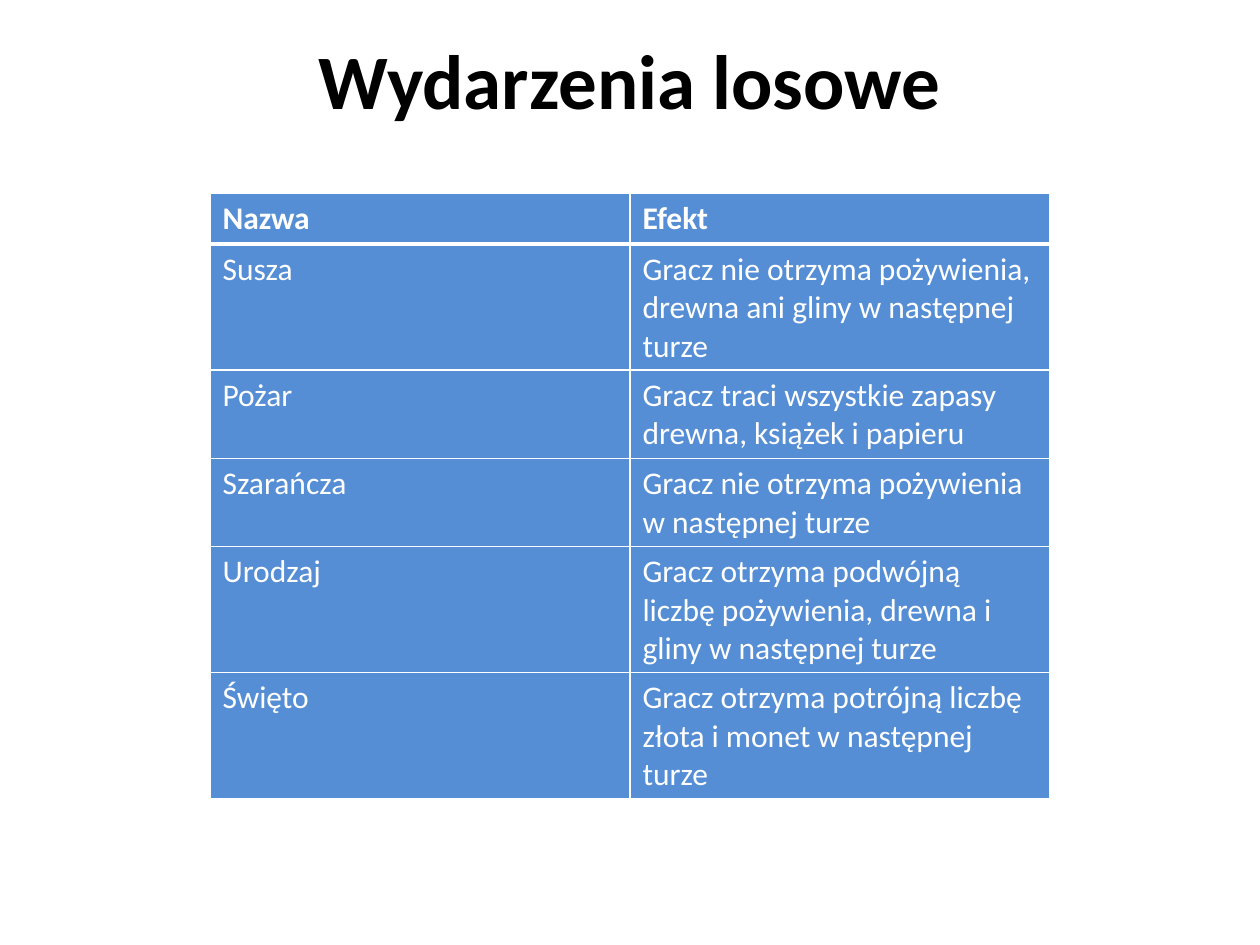
"""Build the slide listing random game events and their effects."""
import pptx
import pptx.dml.color
import pptx.enum.text
import pptx.oxml.ns
import pptx.util
import lxml.etree

PX_PER_INCH = 126
WHITE, BLACK, BLUE = "FFFFFF", "000000", "558ED5"
EVENTS = [
    ("Nazwa", "Efekt"),
    ("Susza", "Gracz nie otrzyma pożywienia, drewna ani gliny w następnej turze"),
    ("Pożar", "Gracz traci wszystkie zapasy drewna, książek i papieru"),
    ("Szarańcza", "Gracz nie otrzyma pożywienia w następnej turze"),
    ("Urodzaj", "Gracz otrzyma podwójną liczbę pożywienia, drewna i gliny w następnej turze"),
    ("Święto", "Gracz otrzyma potrójną liczbę złota i monet w następnej turze"),
]


def px(length):
    return pptx.util.Emu(round(length * 914400 / PX_PER_INCH))


def color(value):
    return pptx.dml.color.RGBColor.from_string(value)


def write(frame, text, size=18, fill=WHITE, bold=False, align=None, font="Calibri"):
    para = frame.paragraphs[0]
    para.alignment = align
    span = para.add_run()
    span.text = text
    span.font.name = font
    span.font.size = pptx.util.Pt(size)
    span.font.bold = bold
    span.font.color.rgb = color(fill)


def add_border(cell, side, width, value=WHITE):
    qn = pptx.oxml.ns.qn
    properties = cell._tc.get_or_add_tcPr()
    line = lxml.etree.SubElement(properties, qn(f"a:ln{side}"), w=str(pptx.util.Pt(width)))
    solid = lxml.etree.SubElement(line, qn("a:solidFill"))
    lxml.etree.SubElement(solid, qn("a:srgbClr"), val=value)


class SlideBuilder:
    def __init__(self, slide, font="Calibri"):
        self.slide = slide
        self.font = font

    def title(self, text, left, top, width, height):
        box = self.slide.shapes.add_textbox(px(left), px(top), px(width), px(height))
        frame = box.text_frame
        frame.word_wrap = True
        frame.vertical_anchor = pptx.enum.text.MSO_ANCHOR.MIDDLE
        write(frame, text, size=44, fill=BLACK, bold=True,
              align=pptx.enum.text.PP_ALIGN.CENTER, font=self.font)

    def table(self, rows, left, top, width, row_height):
        table = self.slide.shapes.add_table(
            len(rows), len(rows[0]), px(left), px(top), px(width), px(row_height * len(rows))
        ).table
        for row_index, row in enumerate(rows):
            for column_index, text in enumerate(row):
                cell = table.cell(row_index, column_index)
                widths = {"L": 1, "R": 1, "T": 3 if row_index == 1 else 1,
                          "B": 3 if row_index == 0 else 1}
                for side, line_width in widths.items():
                    add_border(cell, side, line_width)
                cell.fill.solid()
                cell.fill.fore_color.rgb = color(BLUE)
                write(cell.text_frame, text, bold=row_index == 0, font=self.font)


def main():
    deck = pptx.Presentation()
    deck.slide_width, deck.slide_height = px(1260), px(945)
    page = SlideBuilder(deck.slides.add_slide(deck.slide_layouts[6]))
    page.title("Wydarzenia losowe", 0, 0, 1260, 158)
    page.table(EVENTS, 210, 193, 840, 51)
    deck.save("out.pptx")


if __name__ == "__main__":
    main()
